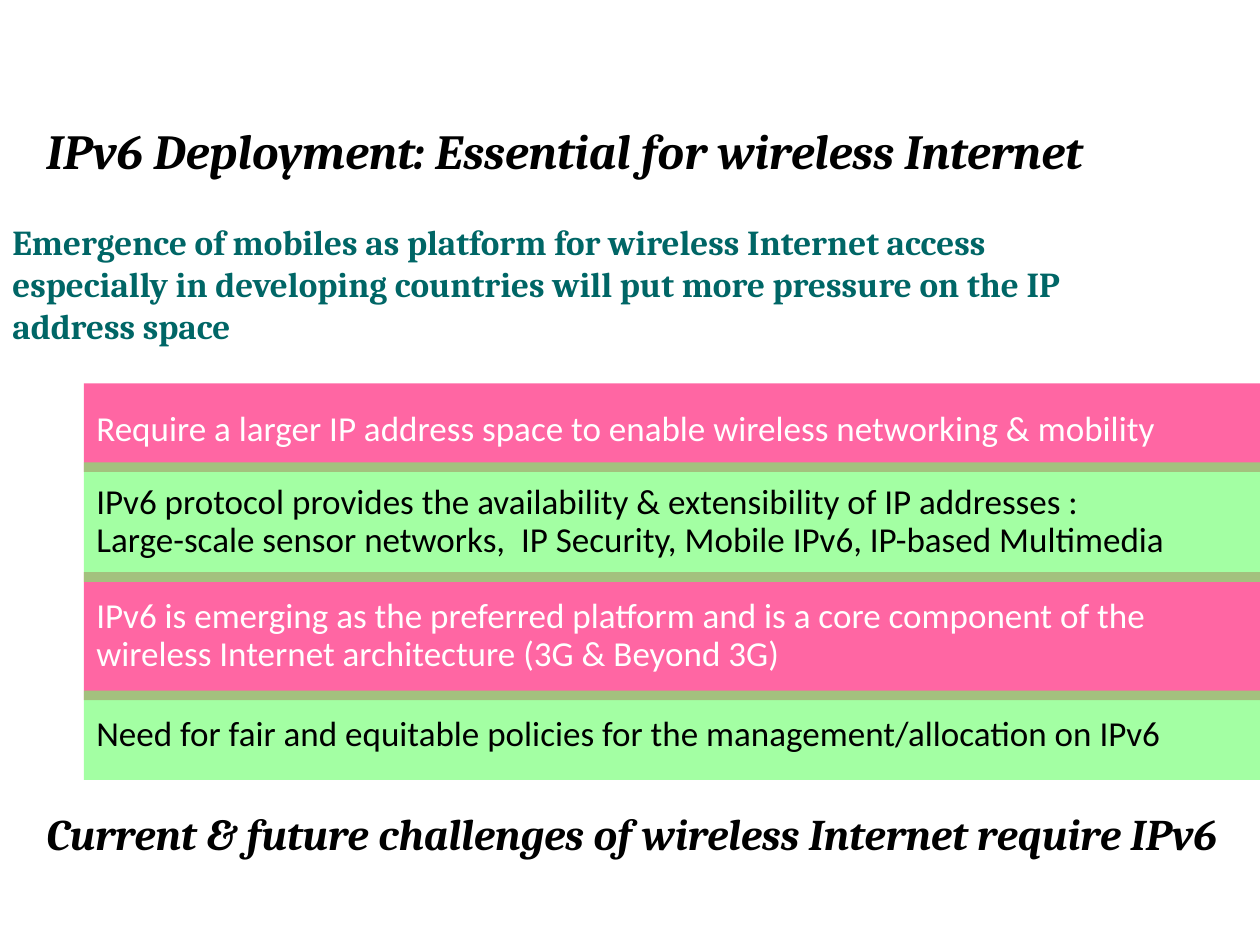
import pptx
import pptx.util
import pptx.dml.color
import pptx.enum.shapes
import pptx.enum.text
from lxml import etree

Pt = pptx.util.Pt
PINK, GREEN = "FF0066", "66FF66"
WHITE, BLACK, TEAL = "FFFFFF", "000000", "006666"


def paint(color_format, value):
    """Set a fill's or font's colour from a hex string."""
    color_format.rgb = pptx.dml.color.RGBColor.from_string(value)


def add_run(p, text, font, size, color, bold=False, italic=False):
    """Add one styled run to a paragraph."""
    r = p.add_run()
    r.text = text
    r.font.name, r.font.size = font, Pt(size)
    r.font.bold, r.font.italic = bold, italic
    paint(r.font.color, color)


def add_heading(s, box, text, size, color, italic=False):
    """Place a bold serif text box."""
    tf = s.shapes.add_textbox(*map(Pt, box)).text_frame
    tf.word_wrap = True
    add_run(tf.paragraphs[0], text, "Cambria", size, color, True, italic)


def add_bar(s, box, lines, fill, color, spacing=0.9, before=0):
    """Place a translucent bar with left-aligned lines."""
    sp = s.shapes.add_shape(pptx.enum.shapes.MSO_SHAPE.RECTANGLE, *map(Pt, box))
    sp.shadow.inherit = False
    sp.line.fill.background()
    sp.fill.solid()
    paint(sp.fill.fore_color, fill)
    clr = sp.fill._xPr.find(".//" + pptx.oxml.ns.qn("a:srgbClr"))
    etree.SubElement(clr, pptx.oxml.ns.qn("a:alpha"), val="60000")
    tf = sp.text_frame
    tf.word_wrap = True
    tf.vertical_anchor = pptx.enum.text.MSO_ANCHOR.MIDDLE
    for i, line in enumerate(lines):
        p = tf.add_paragraph() if i else tf.paragraphs[0]
        p.alignment = pptx.enum.text.PP_ALIGN.LEFT
        p.line_spacing, p.space_before = spacing, Pt(before)
        add_run(p, line, "Calibri", 20, color)


def add_bars(s, left, top, width):
    """Stack the overlapping bars, the pink ones behind the green ones."""
    def bar(y, height, *args):
        add_bar(s, (left, top + y, width, height), *args)

    bar(0, 50.7, ["Require a larger IP address space to enable wireless networking & mobility"],
        PINK, WHITE, 1.0, 4)
    bar(107.9, 73.2, ["IPv6 is emerging as the preferred platform and is a core component of the "
                      "wireless Internet architecture (3G & Beyond 3G)"], PINK, WHITE)
    bar(45.2, 68.4, ["IPv6 protocol provides the availability & extensibility of IP addresses :",
                     "Large-scale sensor networks,  IP Security, Mobile IPv6, IP-based Multimedia"],
        GREEN, BLACK)
    bar(175.7, 51, ["Need for fair and equitable policies for the management/allocation on IPv6"],
        GREEN, BLACK)


def main():
    """Build and save the slide."""
    prs = pptx.Presentation()
    prs.slide_width, prs.slide_height = Pt(720), Pt(540)
    s = prs.slides.add_slide(prs.slide_layouts[6])
    add_heading(s, (0, 122.4, 638, 79.2),
                "Emergence of mobiles as platform for wireless Internet access especially in "
                "developing countries will put more pressure on the IP address space", 20, TEAL)
    add_bars(s, 48, 219, 672)
    add_heading(s, (19.5, 65.5, 700.5, 41),
                "IPv6 Deployment: Essential for wireless Internet", 28, BLACK, True)
    add_heading(s, (19.5, 457.2, 700.5, 37.4),
                "Current & future challenges of wireless Internet require IPv6", 25, BLACK, True)
    prs.save("out.pptx")


if __name__ == "__main__":
    main()
